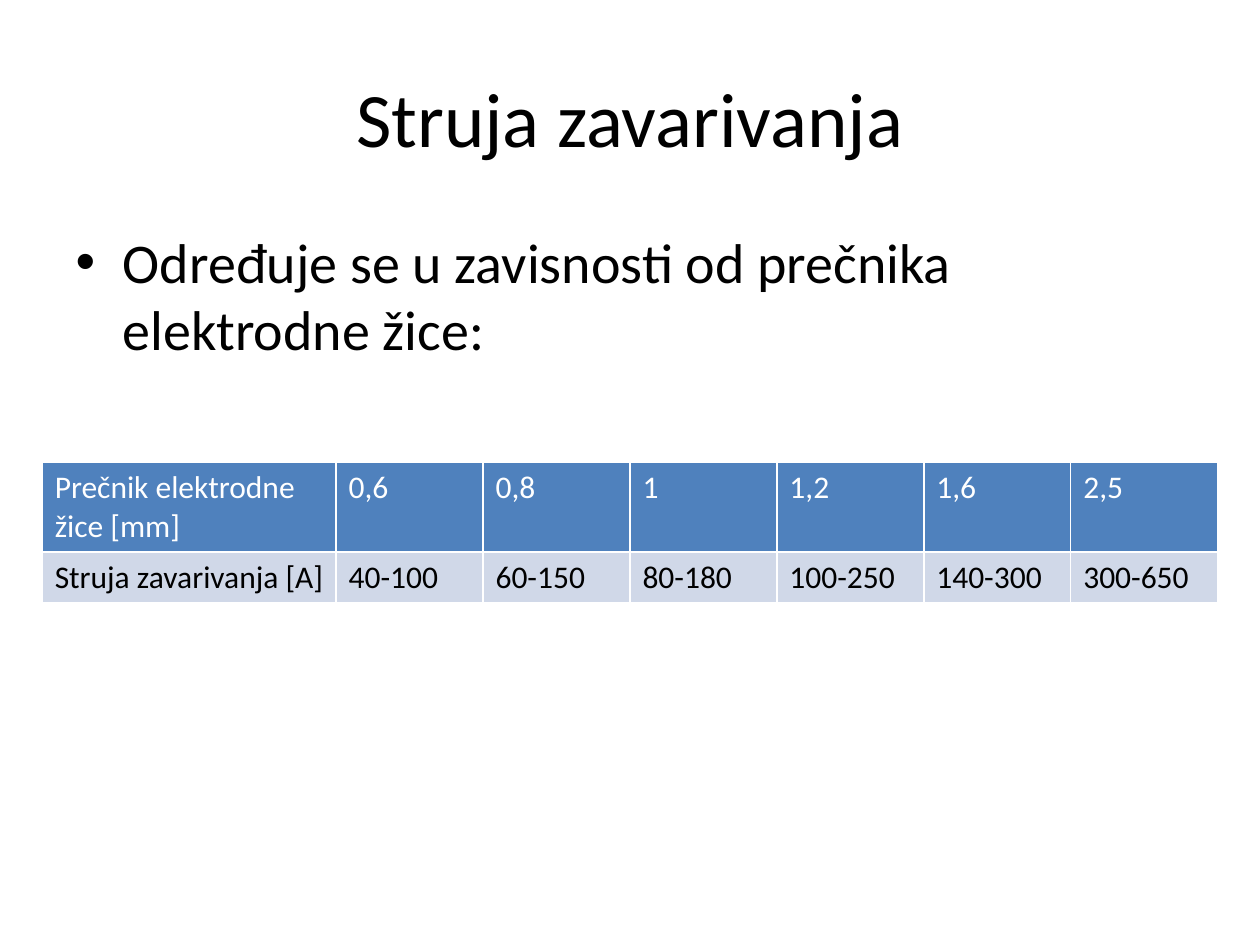
from pptx import Presentation
from pptx.dml.color import RGBColor
from pptx.enum.text import MSO_ANCHOR, PP_ALIGN
from pptx.util import Cm, Pt

TITLE = "Struja zavarivanja"
INTRO = "Određuje se u zavisnosti od prečnika elektrodne žice:"
CURRENTS = [
    ("Prečnik elektrodne žice [mm]", "0,6", "0,8", "1", "1,2", "1,6", "2,5"),
    ("Struja zavarivanja [A]", "40-100", "60-150", "80-180", "100-250", "140-300", "300-650"),
]
COLORS = {"text": "000000", "header_text": "FFFFFF", "header": "4F81BD", "band": "D0D8E8"}
FONT = "Calibri"
TABLE_WIDTH = 23.7
ROW_HEIGHT = 1.03
LABEL_SHARE = 2


def write(frame, text, size, color="text", align=PP_ALIGN.LEFT, anchor=MSO_ANCHOR.TOP):
    frame.text = text
    frame.vertical_anchor = anchor
    paragraph = frame.paragraphs[0]
    paragraph.alignment = align
    font = paragraph.runs[0].font
    font.name = FONT
    font.size = Pt(size)
    font.bold = False
    font.color.rgb = RGBColor.from_string(COLORS[color])


def place(part, left, top, width, height):
    part.left, part.top, part.width, part.height = map(Cm, (left, top, width, height))


def add_currents(slide):
    column_count = len(CURRENTS[0])
    unit = TABLE_WIDTH / (column_count - 1 + LABEL_SHARE)
    currents = slide.shapes.add_table(
        len(CURRENTS), column_count, Cm(0.85), Cm(9.32),
        Cm(TABLE_WIDTH), Cm(ROW_HEIGHT * len(CURRENTS)),
    ).table
    for index, column in enumerate(currents.columns):
        column.width = Cm(unit * (1 if index else LABEL_SHARE))
    for row_index, values in enumerate(CURRENTS):
        fill, color = ("band", "text") if row_index else ("header", "header_text")
        for column_index, value in enumerate(values):
            cell = currents.cell(row_index, column_index)
            cell.fill.solid()
            cell.fill.fore_color.rgb = RGBColor.from_string(COLORS[fill])
            write(cell.text_frame, value, 18, color)


def main():
    deck = Presentation()
    deck.slide_width, deck.slide_height = Cm(25.4), Cm(19.05)
    slide = deck.slides.add_slide(deck.slide_layouts[1])
    title, intro = slide.shapes.title, slide.placeholders[1]
    place(title, 1.27, 0.76, 22.86, 3.18)
    write(title.text_frame, TITLE, 44, align=PP_ALIGN.CENTER, anchor=MSO_ANCHOR.MIDDLE)
    place(intro, 1.27, 4.45, 22.86, 12.57)
    write(intro.text_frame, INTRO, 32)
    add_currents(slide)
    deck.save("out.pptx")


if __name__ == "__main__":
    main()
